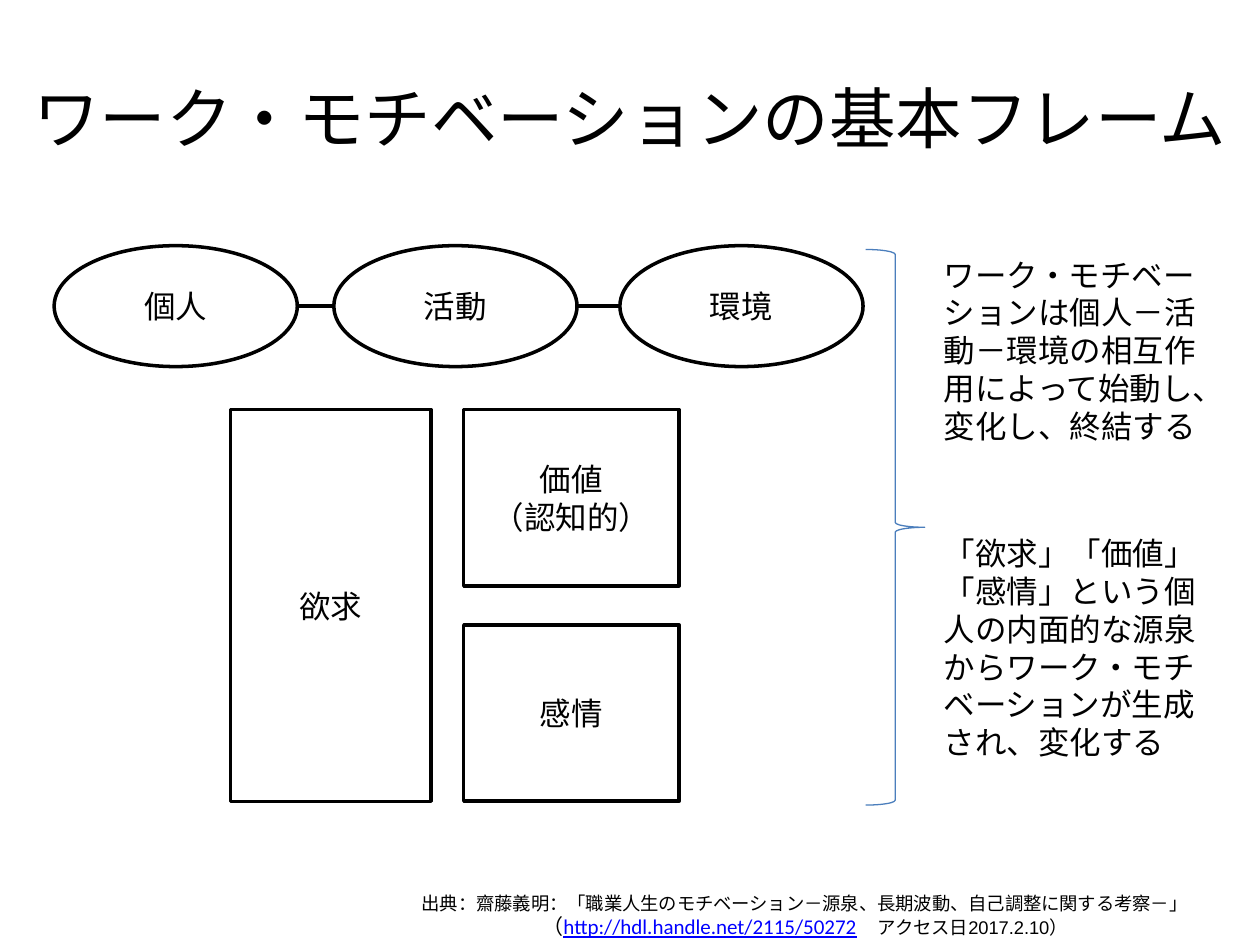
from dataclasses import dataclass
from typing import Optional

from lxml.etree import SubElement
from pptx import Presentation
from pptx.dml.color import RGBColor
from pptx.enum.shapes import MSO_CONNECTOR, MSO_SHAPE
from pptx.enum.text import MSO_ANCHOR, PP_ALIGN
from pptx.oxml.ns import qn
from pptx.util import Inches, Pt


@dataclass(frozen=True)
class Theme:
    ink: RGBColor = RGBColor(0, 0, 0)
    paper: RGBColor = RGBColor(255, 255, 255)
    brace: RGBColor = RGBColor(0x4B, 0x7E, 0xBC)
    url: RGBColor = RGBColor(0, 0, 255)
    font: str = "Calibri"
    alt: str = "Arial"
    title: float = 38
    body: float = 18
    note: float = 12
    small: float = 10.5


@dataclass(frozen=True)
class Box:
    left: float
    top: float
    width: float
    height: float

    def place(self) -> list:
        return [Inches(v) for v in (self.left, self.top, self.width, self.height)]


@dataclass(frozen=True)
class Run:
    text: str
    size: float
    color: RGBColor = Theme.ink
    font: str = Theme.font
    under: bool = False


@dataclass(frozen=True)
class Node:
    kind: MSO_SHAPE
    box: Box
    lines: tuple = ()
    fill: Optional[RGBColor] = None
    line: RGBColor = Theme.ink
    weight: float = 2


def write(frame, lines, align, anchor) -> None:
    frame.word_wrap = True
    frame.vertical_anchor = anchor
    for i, runs in enumerate(lines):
        para = frame.paragraphs[0] if i == 0 else frame.add_paragraph()
        para.alignment = align
        for item in runs:
            run = para.add_run()
            run.text = item.text
            style = {"name": item.font, "size": Pt(item.size), "underline": item.under}
            for key, value in style.items():
                setattr(run.font, key, value)
            run.font.color.rgb = item.color


def add_text(slide, box: Box, lines, align=PP_ALIGN.CENTER, anchor=MSO_ANCHOR.MIDDLE) -> None:
    write(slide.shapes.add_textbox(*box.place()).text_frame, lines, align, anchor)


def add_node(slide, node: Node) -> None:
    shape = slide.shapes.add_shape(node.kind, *node.box.place())
    shape.shadow.inherit = False
    if node.fill is None:
        shape.fill.background()
    else:
        shape.fill.solid()
        shape.fill.fore_color.rgb = node.fill
    shape.line.color.rgb = node.line
    shape.line.width = Pt(node.weight)
    lines = [[Run(text, Theme.body)] for text in node.lines]
    write(shape.text_frame, lines, PP_ALIGN.CENTER, MSO_ANCHOR.MIDDLE)


def add_link(slide, start: float, end: float, level: float) -> None:
    link = slide.shapes.add_connector(
        MSO_CONNECTOR.STRAIGHT, Inches(start), Inches(level), Inches(end), Inches(level))
    link.line.color.rgb = Theme.ink
    link.line.width = Pt(2.25)
    SubElement(link._element.spPr, qn("a:effectLst"))


OVALS = ((0.43, "個人"), (2.65, "活動"), (4.92, "環境"))
RECTS = (
    Node(MSO_SHAPE.RECTANGLE, Box(1.83, 3.25, 1.59, 3.11), ("欲求",)),
    Node(MSO_SHAPE.RECTANGLE, Box(3.68, 3.25, 1.71, 1.4), ("価値", "（認知的）")),
    Node(MSO_SHAPE.RECTANGLE, Box(3.68, 4.96, 1.71, 1.4), ("感情",)),
)
BRACE = Node(MSO_SHAPE.RIGHT_BRACE, Box(6.87, 1.98, 0.47, 4.41),
             line=Theme.brace, weight=0.75)
NOTES = (
    (Box(7.39, 1.98, 2.24, 1.62),
     "ワーク・モチベーションは個人－活動－環境の相互作用によって始動し、変化し、終結する"),
    (Box(7.39, 4.19, 2.37, 1.92),
     "「欲求」「価値」「感情」という個人の内面的な源泉からワーク・モチベーションが生成され、変化する"),
)
SOURCE = (
    [Run("出典：齋藤義明：「職業人生のモチベーション－源泉、長期波動、自己調整に関する考察－」",
         Theme.small)],
    [Run("（", Theme.note),
     Run("http://hdl.handle.net/2115/50272", Theme.note, Theme.url, under=True),
     Run("　", Theme.note),
     Run("アクセス日2017.2.10）", Theme.small, font=Theme.alt)],
)


def main() -> None:
    deck = Presentation()
    deck.slide_width, deck.slide_height = Inches(10), Inches(7.5)
    slide = deck.slides.add_slide(deck.slide_layouts[6])

    add_text(slide, Box(0, 0.3, 10, 1.25),
             [[Run("ワーク・モチベーションの基本フレーム", Theme.title)]])
    add_link(slide, 2, 5.21, 2.43)
    for left, name in OVALS:
        add_node(slide, Node(MSO_SHAPE.OVAL, Box(left, 1.95, 1.93, 0.96),
                             (name,), Theme.paper))
    for node in RECTS:
        add_node(slide, node)
    add_text(slide, Box(2.79, 7.03, 7.2, 0.47), SOURCE)
    for box, text in NOTES:
        add_text(slide, box, [[Run(text, Theme.body)]], PP_ALIGN.LEFT, MSO_ANCHOR.TOP)
    add_node(slide, BRACE)
    deck.save("out.pptx")


if __name__ == "__main__":
    main()
